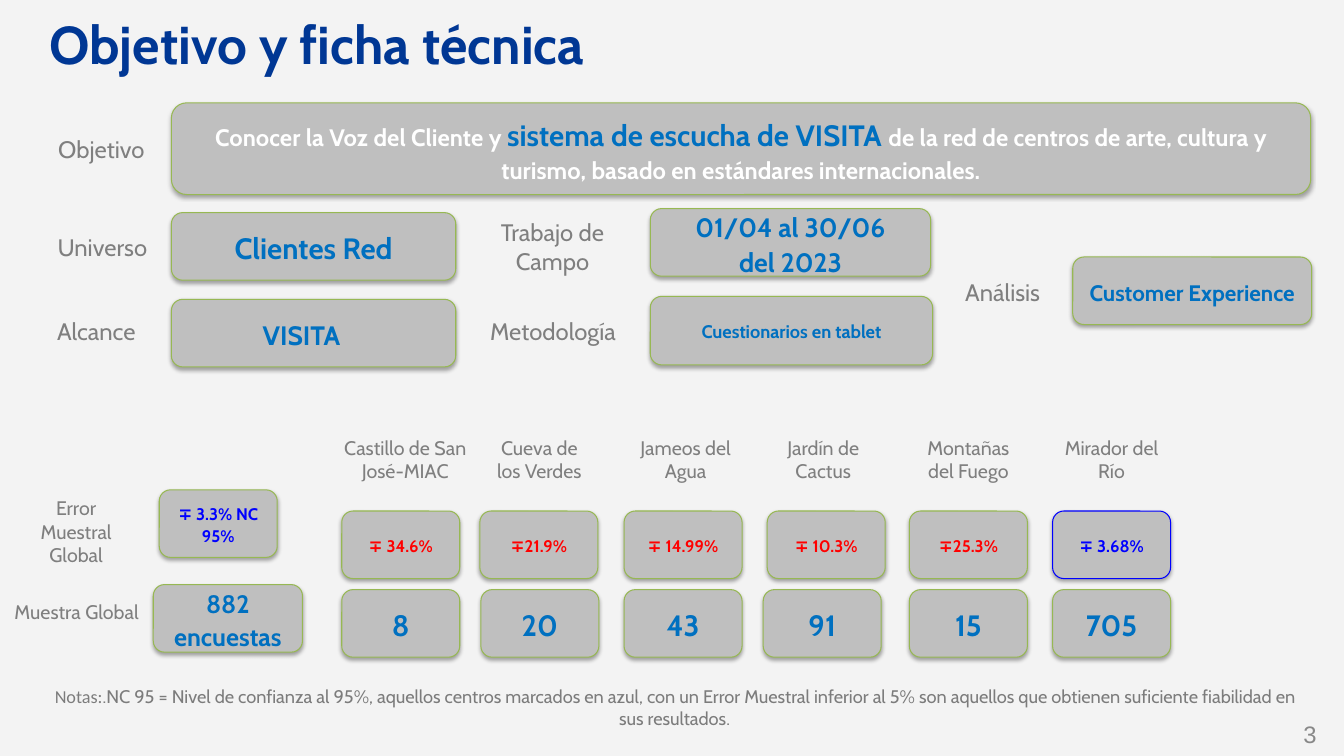
from lxml import etree
from pptx import Presentation
from pptx.dml.color import RGBColor
from pptx.enum.shapes import MSO_SHAPE as Shape
from pptx.enum.text import MSO_ANCHOR as Anchor, MSO_AUTO_SIZE as AutoSize, PP_ALIGN as Align
from pptx.oxml import parse_xml
from pptx.util import Pt

PX = 9144  # 100 px to the inch
GREY, BLUE, GREEN = "7F7F7F", "0070C0", "97B853"
WHITE, RED, PURE_BLUE = "FFFFFF", "FF0000", "0000FF"
SHADOW = (
    '<a:effectLst xmlns:a="http://schemas.openxmlformats.org/drawingml/2006/main">'
    '<a:outerShdw blurRad="39370" dist="22860" dir="5400000" rotWithShape="0">'
    '<a:srgbClr val="000000"><a:alpha val="35000"/></a:srgbClr>'
    '</a:outerShdw></a:effectLst>'
)
color = RGBColor.from_string


def write(shape, lines, size, ink, bold=False, align=Align.CENTER, spacing=None, face="Cabin"):
    frame = shape.text_frame
    frame.word_wrap = True
    frame.auto_size = AutoSize.NONE
    frame.vertical_anchor = Anchor.MIDDLE
    frame.margin_left = frame.margin_right = 12 * PX
    frame.margin_top = frame.margin_bottom = 6 * PX
    frame.text = lines
    for paragraph in frame.paragraphs:
        paragraph.alignment = align
        if spacing:
            paragraph.line_spacing = spacing
        font = paragraph.font
        font.name, font.size, font.bold = face, Pt(size), bold
        font.color.rgb = color(ink)
    return frame


def add_panel(left, top, width, height, lines, size, ink, outline=GREEN):
    panel = slide.shapes.add_shape(
        Shape.ROUNDED_RECTANGLE, left * PX, top * PX, width * PX, height * PX)
    panel.fill.solid()
    panel.fill.fore_color.rgb = color("BFBFBF")
    panel.line.color.rgb = color(outline)
    panel.line.width = Pt(0.75)
    panel.element.spPr.append(parse_xml(SHADOW))
    return write(panel, lines, size, ink, bold=True, spacing=1.1)


presentation = Presentation()
presentation.slide_width, presentation.slide_height = 1333 * PX, 750 * PX
slide = presentation.slides.add_slide(presentation.slide_layouts[5])
slide.background.fill.solid()
slide.background.fill.fore_color.rgb = color("F3F3F3")

# Title
title = slide.shapes.title
title.left, title.top, title.width, title.height = 37 * PX, 2 * PX, 1252 * PX, 82 * PX
write(title, "Objetivo y ficha técnica", 38, "003794", bold=True, align=Align.LEFT)

# Labels
centres = [
    ("Castillo de San José-MIAC", 327, 150, 339, 339, "∓ 34.6%", "8"),
    ("Cueva de los Verdes", 477, 116, 476, 477, "∓21.9%", "20"),
    ("Jameos del Agua", 609, 142, 619, 619, "∓ 14.99%", "43"),
    ("Jardín de Cactus", 744, 145, 761, 757, "∓ 10.3%", "91"),
    ("Montañas del Fuego", 902, 117, 902, 902, "∓25.3%", "15"),
    ("Mirador del Río", 1044, 117, 1044, 1044, "∓ 3.68%", "705"),
]
labels = [
    (31, 127, 139, 41, "Objetivo", 17),
    (32, 224, 139, 41, "Universo", 17),
    (24, 308, 143, 41, "Alcance", 17),
    (453, 210, 190, 69, "Trabajo de\nCampo", 17),
    (455, 308, 187, 41, "Metodología", 17),
    (925, 269, 139, 41, "Análisis", 17),
    (0, 484, 151, 86, "Error\nMuestral Global", 14),
    (-1, 577, 154, 59, "Muestra Global", 14),
]
labels += [(left, 420, width, 71, name, 14) for name, left, width, *_ in centres]
for left, top, width, height, lines, size in labels:
    box = slide.shapes.add_textbox(left * PX, top * PX, width * PX, height * PX)
    write(box, lines, size, GREY)

# Objective
objective = add_panel(170, 102, 1130, 91, "", 17, WHITE)
for text, size, ink in [
    ("Conocer la Voz del Cliente y ", 17, WHITE),
    ("sistema de escucha de VISITA ", 21, BLUE),
    ("de la red de centros de arte, cultura y turismo, "
     "basado en estándares internacionales.", 17, WHITE),
]:
    run = objective.paragraphs[0].add_run()
    run.text = text
    run.font.size = Pt(size)
    run.font.color.rgb = color(ink)

# Technical sheet
add_panel(170, 211, 282, 67, "Clientes Red", 21, BLUE)
scope = add_panel(170, 297, 282, 67, "VISITA", 19, BLUE)
scope.margin_right = 36 * PX
add_panel(645, 207, 278, 67, "01/04 al 30/06\ndel 2023", 19, BLUE)
add_panel(645, 294, 280, 68, "Cuestionarios en tablet", 13, BLUE)
add_panel(1064, 255, 237, 67, "Customer Experience", 16, BLUE)

# Global sample
add_panel(158, 486, 117, 67, "∓ 3.3% NC 95%", 12, PURE_BLUE)
add_panel(152, 580, 148, 67, "882\nencuestas", 18, BLUE)

# Error and sample of each centre; reliable ones in blue
for name, _, _, error_left, sample_left, error, sample in centres:
    reliable = float(error.strip("∓ %")) < 5
    add_panel(error_left, 507, 117, 67, error, 12,
              PURE_BLUE if reliable else RED, PURE_BLUE if reliable else GREEN)
    add_panel(sample_left, 585, 117, 67, sample, 21, BLUE)

# Notes
notes_box = slide.shapes.add_textbox(37 * PX, 674 * PX, 1264 * PX, 78 * PX)
notes = write(notes_box, "", 13, "7C7C7C")
notes.vertical_anchor = Anchor.TOP
for text, face in [
    ("Notas:", "Calibri"),
    (".NC 95 = Nivel de confianza al 95%, aquellos centros marcados en azul, con un Error "
     "Muestral inferior al 5% son aquellos que obtienen suficiente fiabilidad en sus "
     "resultados.", "Cabin"),
]:
    run = notes.paragraphs[0].add_run()
    run.text = text
    run.font.name = face

# Page number
page_box = slide.shapes.add_textbox(1073 * PX, 709 * PX, 233 * PX, 39 * PX)
page = write(page_box, "3", 17, "888888", align=Align.RIGHT, face="Arial")
page.margin_left = page.margin_right = page.margin_top = page.margin_bottom = 0

presentation.save("out.pptx")
